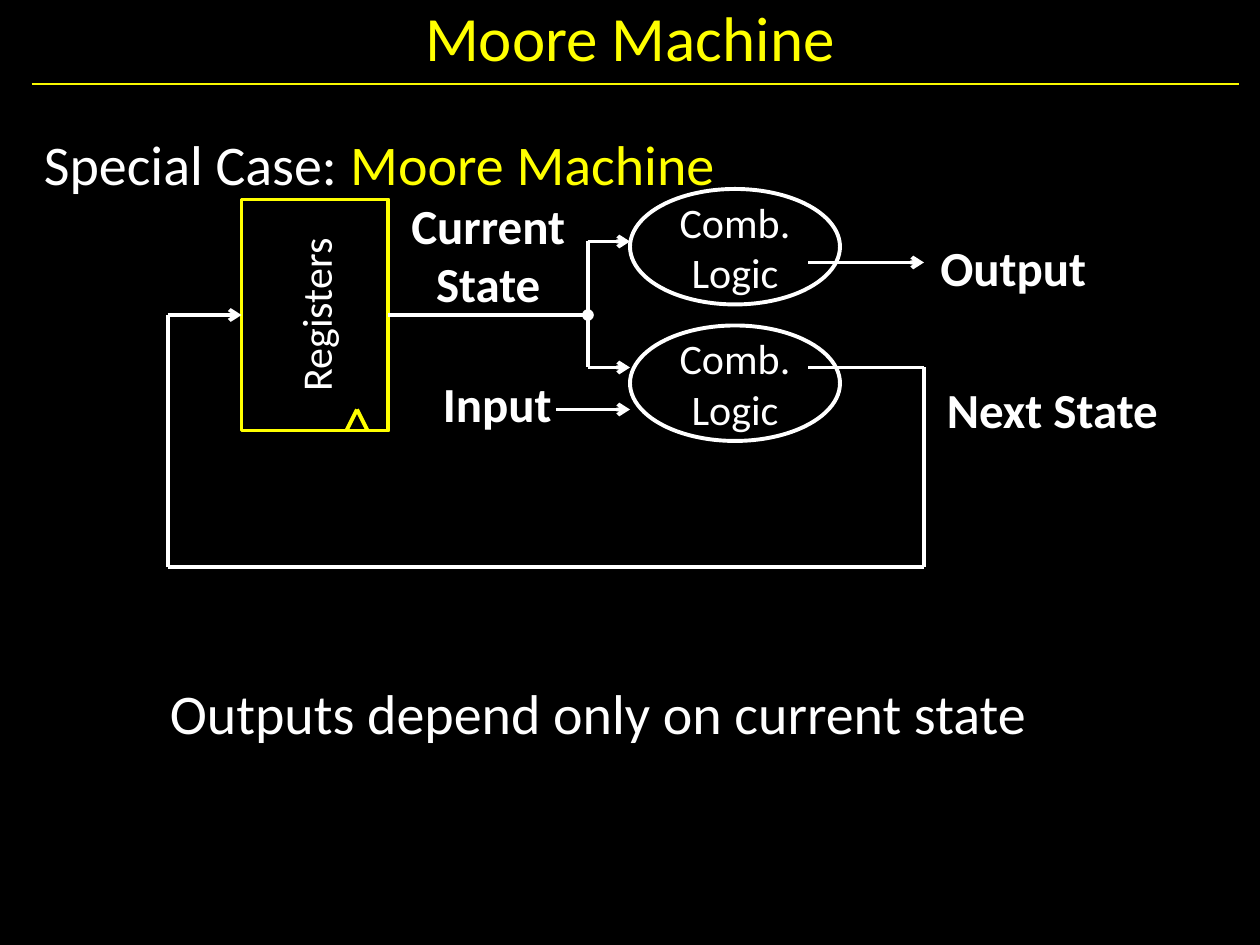
import dataclasses
import lxml.etree
import pptx
import pptx.dml.color
import pptx.enum.shapes
import pptx.enum.text
import pptx.oxml.ns
import pptx.util

ALIGN = pptx.enum.text.PP_ALIGN
ANCHOR = pptx.enum.text.MSO_ANCHOR
SHAPE = pptx.enum.shapes.MSO_SHAPE
WIDTH, HEIGHT = 10, 7.5
COLUMNS, ROWS = 120, 90
WHITE, YELLOW, BLACK = "FFFFFF", "FFFF00", "000000"


@dataclasses.dataclass
class Box:
    col: float
    row: float
    cols: float
    rows: float


@dataclasses.dataclass
class Label:
    text: str
    box: Box
    align: ALIGN = ALIGN.CENTER


@dataclasses.dataclass
class Block:
    text: str
    box: Box
    kind: SHAPE = SHAPE.OVAL
    color: str = WHITE
    vert: str = "horz"


@dataclasses.dataclass
class Wire:
    start: tuple[float, float]
    end: tuple[float, float]
    tail: str = ""
    color: str = WHITE
    weight: float = 2.25


LABELS = [
    Label("Next State", Box(89, 35.6, 25, 7), ALIGN.LEFT),
    Label("Current State", Box(35, 18, 23, 12.5)),
    Label("Input", Box(41, 35, 15, 7), ALIGN.LEFT),
    Label("Output", Box(84, 22, 25, 7)),
]
BLOCKS = [
    Block("Registers", Box(23, 19, 14, 22), SHAPE.RECTANGLE, YELLOW, "vert270"),
    Block("Comb.\nLogic", Box(60, 18, 20, 11)),
    Block("Comb.\nLogic", Box(60, 31, 20, 11)),
]
WIRES = [
    Wire((3, 8), (118, 8), color="F9F900", weight=0.75),
    Wire((88, 35), (88, 54)),
    Wire((53, 39), (60, 39), "arrow"),
    Wire((88, 54), (16, 54)),
    Wire((16, 54), (16, 30)),
    Wire((37, 30), (56, 30), "oval"),
    Wire((16, 30), (23, 30), "arrow"),
    Wire((77, 35), (88, 35)),
    Wire((77, 25), (88, 25), "arrow"),
    Wire((56, 35), (60, 35), "arrow"),
    Wire((56, 23), (60, 23), "arrow"),
    Wire((56, 23), (56, 35)),
    Wire((33, 41), (34, 39), color=YELLOW),
    Wire((35, 41), (34, 39), color=YELLOW),
]


def rgb(color: str):
    return pptx.dml.color.RGBColor.from_string(color)


def x(col: float):
    return pptx.util.Inches(WIDTH * col / COLUMNS)


def y(row: float):
    return pptx.util.Inches(HEIGHT * row / ROWS)


def place(box: Box):
    return x(box.col), y(box.row), x(box.cols), y(box.rows)


def write(p, text: str, *, size: float, color: str = WHITE, bold: bool = False,
          align: ALIGN = ALIGN.LEFT):
    p.alignment = align
    for i, line in enumerate(text.split("\n")):
        if i:
            p.add_line_break()
        r = p.add_run()
        r.text = line
        r.font.name = "Calibri"
        r.font.size = pptx.util.Pt(size)
        r.font.bold = bold
        r.font.color.rgb = rgb(color)


def add_text_frame(s, box: Box, anchor: ANCHOR = ANCHOR.TOP):
    tf = s.shapes.add_textbox(*place(box)).text_frame
    tf.word_wrap = True
    tf.vertical_anchor = anchor
    return tf


def draw_block(s, block: Block):
    sp = s.shapes.add_shape(block.kind, *place(block.box))
    sp.shadow.inherit = False
    sp.fill.background()
    sp.line.color.rgb = rgb(block.color)
    sp.line.width = pptx.util.Pt(2.25)
    tf = sp.text_frame
    tf.word_wrap = False
    tf.vertical_anchor = ANCHOR.MIDDLE
    tf._txBody.bodyPr.set("vert", block.vert)
    write(tf.paragraphs[0], block.text, size=24, align=ALIGN.CENTER)


def draw_wire(s, wire: Wire):
    (c1, r1), (c2, r2) = wire.start, wire.end
    line = s.shapes.add_connector(
        pptx.enum.shapes.MSO_CONNECTOR.STRAIGHT, x(c1), y(r1), x(c2), y(r2))
    line.line.color.rgb = rgb(wire.color)
    line.line.width = pptx.util.Pt(wire.weight)
    qn = pptx.oxml.ns.qn
    if wire.tail:
        ln = line.line._get_or_add_ln()
        lxml.etree.SubElement(ln, qn("a:tailEnd"), type=wire.tail)
    lxml.etree.SubElement(line._element.spPr, qn("a:effectLst"))


def draw_body(s):
    tf = add_text_frame(s, Box(3, 11.75, 114, 73.25))
    p = tf.paragraphs[0]
    write(p, "Special Case: ", size=32)
    write(p, "Moore Machine", size=32, color=YELLOW)
    p = tf.add_paragraph()
    p.space_before = pptx.util.Pt(275)
    p._p.get_or_add_pPr().set("marL", str(pptx.util.Inches(1)))
    write(p, "Outputs depend only on current state", size=32)


def main():
    prs = pptx.Presentation()
    prs.slide_width = pptx.util.Inches(WIDTH)
    prs.slide_height = pptx.util.Inches(HEIGHT)
    s = prs.slides.add_slide(prs.slide_layouts[6])
    s.background.fill.solid()
    s.background.fill.fore_color.rgb = rgb(BLACK)
    tf = add_text_frame(s, Box(3, 0, 114, 7), ANCHOR.MIDDLE)
    write(tf.paragraphs[0], "Moore Machine", size=36, color=YELLOW, align=ALIGN.CENTER)
    draw_body(s)
    for label in LABELS:
        tf = add_text_frame(s, label.box)
        write(tf.paragraphs[0], label.text, size=28, bold=True, align=label.align)
    for block in BLOCKS:
        draw_block(s, block)
    for wire in WIRES:
        draw_wire(s, wire)
    prs.save("out.pptx")


if __name__ == "__main__":
    main()
